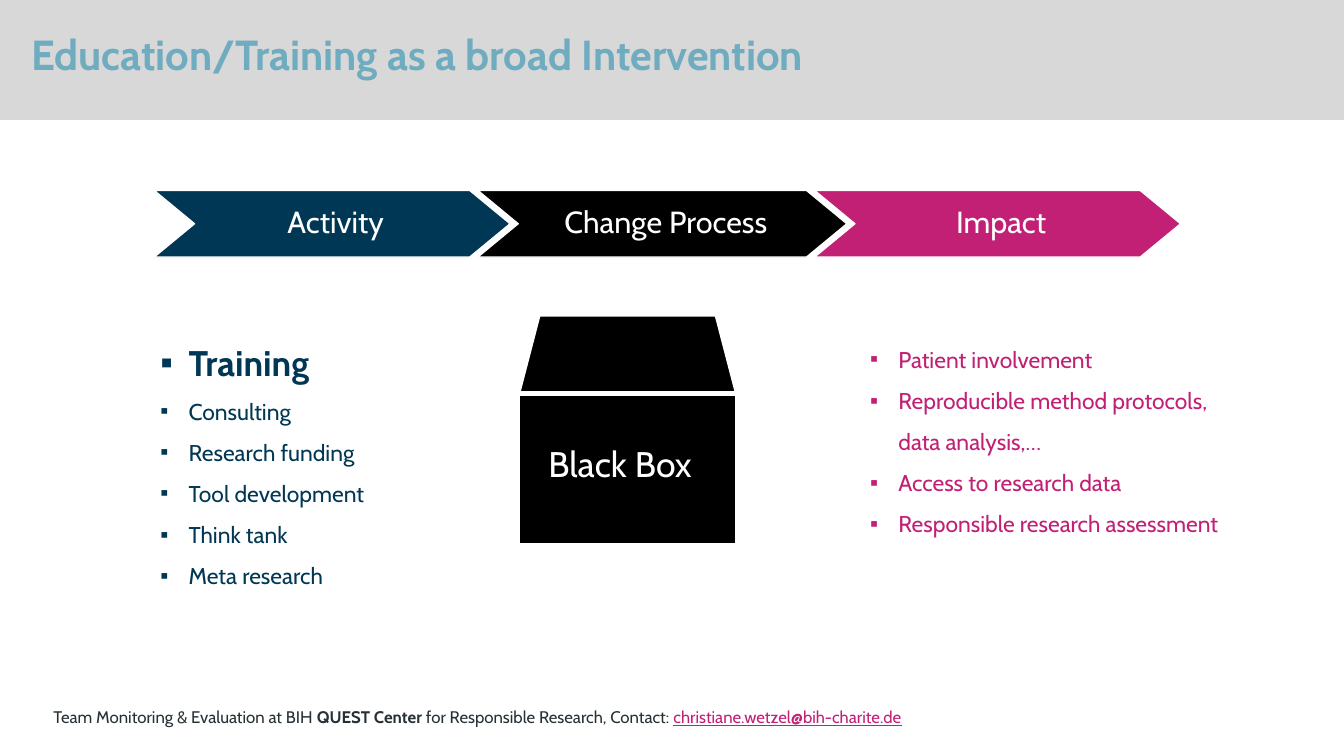
from lxml import etree
from pptx import Presentation
from pptx import util as u
from pptx.dml.color import RGBColor
from pptx.enum import shapes, text
from pptx.oxml import ns

NAVY = RGBColor(0x00, 0x37, 0x54)
BLACK = RGBColor(0x00, 0x00, 0x00)
MAGENTA = RGBColor(0xC1, 0x20, 0x75)
WHITE = RGBColor(0xFF, 0xFF, 0xFF)
BAND_GREY = RGBColor(0xD8, 0xD8, 0xD8)
TITLE_BLUE = RGBColor(0x70, 0xAC, 0xC0)
INK = RGBColor(0x26, 0x31, 0x36)


class SlideBuilder:
    family = "Cabin"
    list_size = 16.3
    large_size = 25.4

    def __init__(self, slide):
        self.slide = slide

    def style(self, font, size, color, bold=False):
        font.name = self.family
        font.size = u.Pt(size)
        font.color.rgb = color
        font.bold = bold

    def place(self, shape, left, top, width, height):
        shape.left, shape.top = u.Inches(left), u.Inches(top)
        shape.width, shape.height = u.Inches(width), u.Inches(height)

    def shape(self, kind, at, fill, line_width=0, parent=None):
        owner = parent or self.slide
        item = owner.shapes.add_shape(kind, *map(u.Inches, at))
        item.shadow.inherit = False
        item.fill.solid()
        item.fill.fore_color.rgb = fill
        if line_width:
            item.line.color.rgb = WHITE
            item.line.width = u.Pt(line_width)
        else:
            item.line.fill.background()
        return item

    def title(self, wording, at):
        heading = self.slide.shapes.title
        self.place(heading, *at)
        frame = heading.text_frame
        frame.text = wording
        frame.auto_size = text.MSO_AUTO_SIZE.NONE
        frame.vertical_anchor = text.MSO_ANCHOR.TOP
        line = frame.paragraphs[0]
        line.alignment = text.PP_ALIGN.LEFT
        line.line_spacing = 0.9
        self.style(line.font, 30, TITLE_BLUE, True)

    def band(self, at, color):
        band = self.shape(shapes.MSO_SHAPE.RECTANGLE, at, color)
        self.slide.shapes.title.element.addprevious(band.element)

    def bullets(self, index, at, entries, color, lead=None):
        body = self.slide.placeholders[index]
        self.place(body, *at)
        frame = body.text_frame
        frame.text = "\n".join(entries)
        frame.auto_size = text.MSO_AUTO_SIZE.NONE
        for entry in frame.paragraphs:
            properties = entry._p.get_or_add_pPr()
            properties.set("marL", str(u.Inches(0.28)))
            properties.set("indent", str(u.Inches(-0.28)))
            etree.SubElement(properties, ns.qn("a:buChar")).set("char", "▪")
            entry.line_spacing = 1.5
            entry.space_before = u.Pt(0)
            is_lead = entry.text == lead
            self.style(entry.font, self.large_size if is_lead else self.list_size,
                       color, is_lead)

    def chevron(self, wording, left, width, color):
        height = 0.66
        arrow = self.shape(shapes.MSO_SHAPE.CHEVRON, (left, 1.89, width, height), color, 1)
        arrow.adjustments[0] = 0.4 / height
        frame = arrow.text_frame
        frame.margin_left, frame.margin_right = u.Inches(0.07), u.Inches(0)
        frame.margin_top = frame.margin_bottom = u.Inches(0.03)
        frame.vertical_anchor = text.MSO_ANCHOR.MIDDLE
        frame.text = wording
        label = frame.paragraphs[0]
        label.alignment = text.PP_ALIGN.CENTER
        label.line_spacing = 0.9
        self.style(label.font, 21.8, WHITE)

    def text_box(self, at, wrap=True):
        frame = self.slide.shapes.add_textbox(*map(u.Inches, at)).text_frame
        frame.word_wrap = wrap
        return frame

    def black_box(self):
        group = self.slide.shapes.add_group_shape()
        self.shape(shapes.MSO_SHAPE.RECTANGLE, (5.14, 3.91, 2.17, 1.5), BLACK, 3, group)
        lid = self.shape(shapes.MSO_SHAPE.TRAPEZOID, (5.14, 3.12, 2.17, 0.78), BLACK, 3, group)
        lid.adjustments[0] = 0.26
        frame = self.text_box((5.34, 4.34, 1.76, 0.53), wrap=False)
        frame.text = "Black Box"
        self.style(frame.paragraphs[0].font, self.large_size, WHITE)

    def contact(self, at, parts):
        frame = self.text_box(at)
        frame.margin_left = frame.margin_right = frame.margin_bottom = u.Inches(0)
        frame.margin_top = u.Inches(0.01)
        for wording, color, bold, underline in parts:
            run = frame.paragraphs[0].add_run()
            run.text = wording
            self.style(run.font, 12, color, bold)
            run.font.underline = underline


def main():
    deck = Presentation()
    deck.slide_width, deck.slide_height = u.Inches(13.33), u.Inches(7.5)
    page = SlideBuilder(deck.slides.add_slide(deck.slide_layouts.get_by_name("Two Content")))

    page.title("Education/Training as a broad Intervention", (0.21, 0.29, 10.87, 0.94))
    page.band((0, 0, 13.33, 1.19), BAND_GREY)
    page.bullets(1, (1.49, 3.12, 2.8, 2.8),
                 ["Training", "Consulting", "Research funding", "Tool development",
                  "Think tank", "Meta research"], NAVY, lead="Training")
    page.black_box()
    for stage in (("Activity", 1.53, 3.53, NAVY),
                  ("Change Process", 4.74, 3.66, BLACK),
                  ("Impact", 8.08, 3.63, MAGENTA)):
        page.chevron(*stage)
    page.bullets(2, (8.53, 3.24, 3.87, 2.57),
                 ["Patient involvement", "Reproducible method protocols, data analysis,…",
                  "Access to research data", "Responsible research assessment"], MAGENTA)
    page.contact((0.53, 7, 10.21, 0.21), [
        ("Team Monitoring & Evaluation at BIH ", INK, False, False),
        ("QUEST Center ", INK, True, False),
        ("for Responsible Research, Contact: ", INK, False, False),
        ("christiane.wetzel@bih-charite.de", MAGENTA, False, True),
    ])
    deck.save("out.pptx")


if __name__ == "__main__":
    main()
